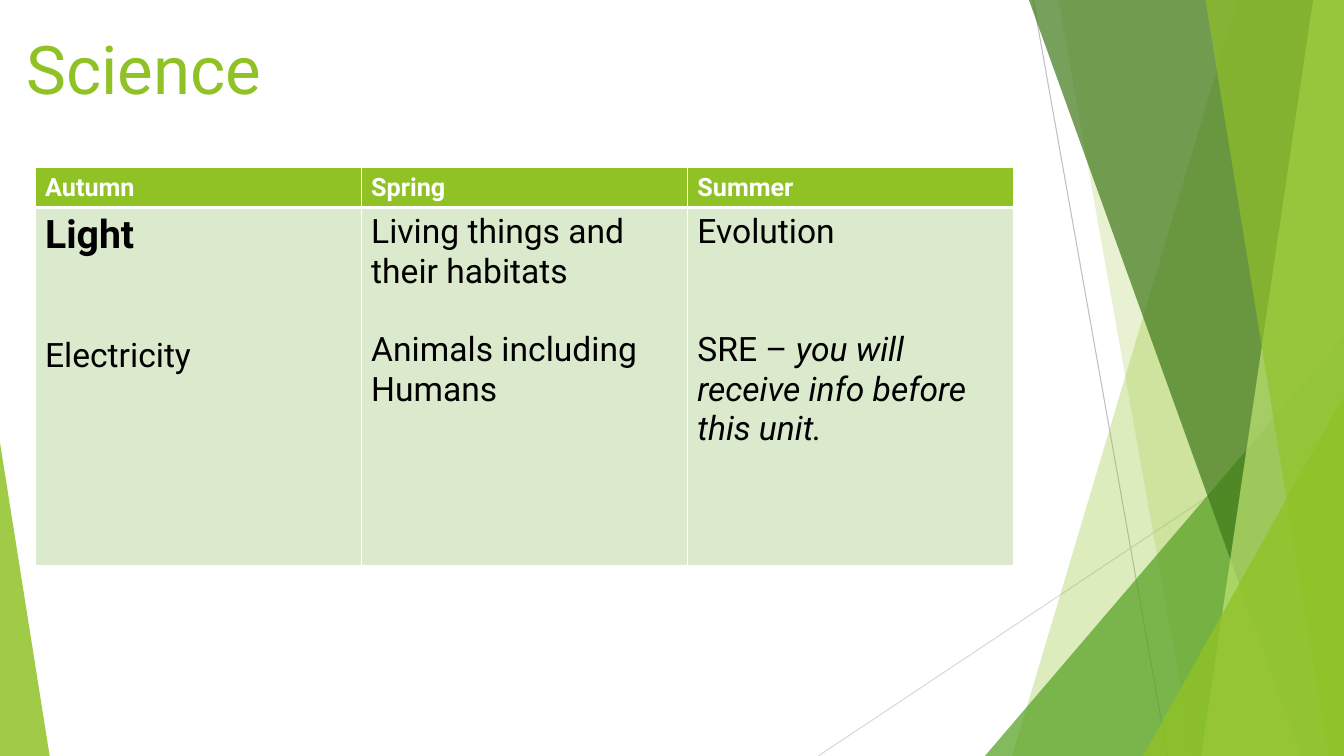
from lxml import etree
from pptx import Presentation
from pptx.dml.color import RGBColor
from pptx.enum.shapes import MSO_CONNECTOR, MSO_SHAPE
from pptx.enum.text import MSO_ANCHOR, PP_ALIGN
from pptx.oxml.ns import qn
from pptx.util import Pt

STRAIGHT = MSO_CONNECTOR.STRAIGHT
TRIANGLE = MSO_SHAPE.ISOSCELES_TRIANGLE
TOP, LEFT = MSO_ANCHOR.TOP, PP_ALIGN.LEFT
WIDTH, HEIGHT = 960, 540
TITLE_ONLY = 5
FONT = "Roboto"
COLORS = {
    "lime": "90C226", "green": "54A021", "forest": "3F7819", "pale": "C0E474",
    "cell": "DBE9CD", "white": "FFFFFF", "black": "000000",
    "gray": "BFBFBF", "light_gray": "D9D9D9",
}

# Background: line ends; top and bottom x of each band's left edge; triangle frames
LINES = [(738, 0, 834, 540, "gray"), (960, 290, 584.5, 540, "light_gray")]
BACK_BANDS = [(884, 723, "lime", 30), (756, 852, "lime", 20)]
FRONT_BANDS = [(735, 929.5, "forest", 70), (938, 858, "pale", 70), (861, 949, "lime", 65)]
BACK_TRIANGLE = (703.5, 240, 256.5, 1, "green", 72)
FRONT_TRIANGLES = [(816.5, 283, 143.5, 1, "lime", 80), (0, 316, 35.5, 0, "lime", 85)]

# Table: each paragraph is (space before, size, spans of (text, bold, italic))
HEADERS = ["Autumn", "Spring", "Summer"]
UNITS = [
    [(0, 28, [("Light", True, False)]),
     (56, 24, [("Electricity", False, False)])],
    [(0, 24, [("Living things and their habitats", False, False)]),
     (28, 24, [("Animals including Humans", False, False)])],
    [(0, 24, [("Evolution", False, False)]),
     (56, 24, [("SRE – ", False, False),
               ("you will receive info before this unit.", False, True)])],
]


def rgb(name):
    return RGBColor.from_string(COLORS[name])


def paint(shape, color, opacity):
    shape.shadow.inherit = False
    shape.line.fill.background()
    shape.fill.solid()
    shape.fill.fore_color.rgb = rgb(color)
    tint = shape.fill._xPr.find(qn("a:solidFill"))[0]
    etree.SubElement(tint, qn("a:alpha"), val=str(opacity * 1000))


def add_line(page, x1, y1, x2, y2, color):
    line = page.shapes.add_connector(STRAIGHT, Pt(x1), Pt(y1), Pt(x2), Pt(y2))
    line.line.color.rgb = rgb(color)
    line.line.width = Pt(0.75)
    etree.SubElement(line._element.spPr, qn("a:effectLst"))


def add_band(page, top_x, bottom_x, color, opacity):
    outline = page.shapes.build_freeform(Pt(top_x), 0)
    corners = [(WIDTH, 0), (WIDTH, HEIGHT), (bottom_x, HEIGHT)]
    outline.add_line_segments([(Pt(x), Pt(y)) for x, y in corners])
    paint(outline.convert_to_shape(), color, opacity)


def add_triangle(page, left, top, width, apex, color, opacity):
    shape = page.shapes.add_shape(
        TRIANGLE, Pt(left), Pt(top), Pt(width), Pt(HEIGHT - top))
    shape.adjustments[0] = apex
    paint(shape, color, opacity)


def style(span, size, color, bold=False, italic=False):
    span.font.name = FONT
    span.font.size = Pt(size)
    span.font.bold = bold
    span.font.italic = italic
    span.font.color.rgb = rgb(color)


def add_title(page, text):
    title = page.shapes.title
    title.left, title.top, title.width, title.height = Pt(11.5), Pt(16), Pt(677), Pt(104)
    frame = title.text_frame
    frame.text = text
    frame.vertical_anchor = TOP
    frame.paragraphs[0].alignment = LEFT
    style(frame.paragraphs[0].runs[0], 48, "lime")


def format_cell(cell, fill, top, bottom):
    borders = cell._tc.get_or_add_tcPr()
    for side, width in (("L", 1), ("R", 1), ("T", top), ("B", bottom)):
        edge = etree.SubElement(borders, qn(f"a:ln{side}"), w=str(Pt(width)))
        solid = etree.SubElement(edge, qn("a:solidFill"))
        etree.SubElement(solid, qn("a:srgbClr"), val=COLORS["white"])
    cell.fill.solid()
    cell.fill.fore_color.rgb = rgb(fill)


def write_cell(cell, paras, color):
    frame = cell.text_frame
    for index, (space, size, spans) in enumerate(paras):
        para = frame.paragraphs[0] if index == 0 else frame.add_paragraph()
        if space:
            para.space_before = Pt(space)
        for text, bold, italic in spans:
            span = para.add_run()
            span.text = text
            style(span, size, color, bold, italic)


def add_units_table(page):
    table = page.shapes.add_table(
        2, len(HEADERS), Pt(25), Pt(119.8), Pt(699), Pt(284)).table
    table.rows[0].height, table.rows[1].height = Pt(28.4), Pt(255.6)
    for index, (header, units) in enumerate(zip(HEADERS, UNITS)):
        table.columns[index].width = Pt(233)
        head, body = table.cell(0, index), table.cell(1, index)
        format_cell(head, "lime", 1, 3)
        write_cell(head, [(0, 18, [(header, True, False)])], "white")
        format_cell(body, "cell", 3, 1)
        write_cell(body, units, "black")


def main():
    deck = Presentation()
    deck.slide_width, deck.slide_height = Pt(WIDTH), Pt(HEIGHT)
    page = deck.slides.add_slide(deck.slide_layouts[TITLE_ONLY])

    # Background facets, back to front
    for line in LINES:
        add_line(page, *line)
    for band in BACK_BANDS:
        add_band(page, *band)
    add_triangle(page, *BACK_TRIANGLE)
    for band in FRONT_BANDS:
        add_band(page, *band)
    for triangle in FRONT_TRIANGLES:
        add_triangle(page, *triangle)

    # Content
    add_title(page, "Science")
    add_units_table(page)
    deck.save("out.pptx")


if __name__ == "__main__":
    main()
